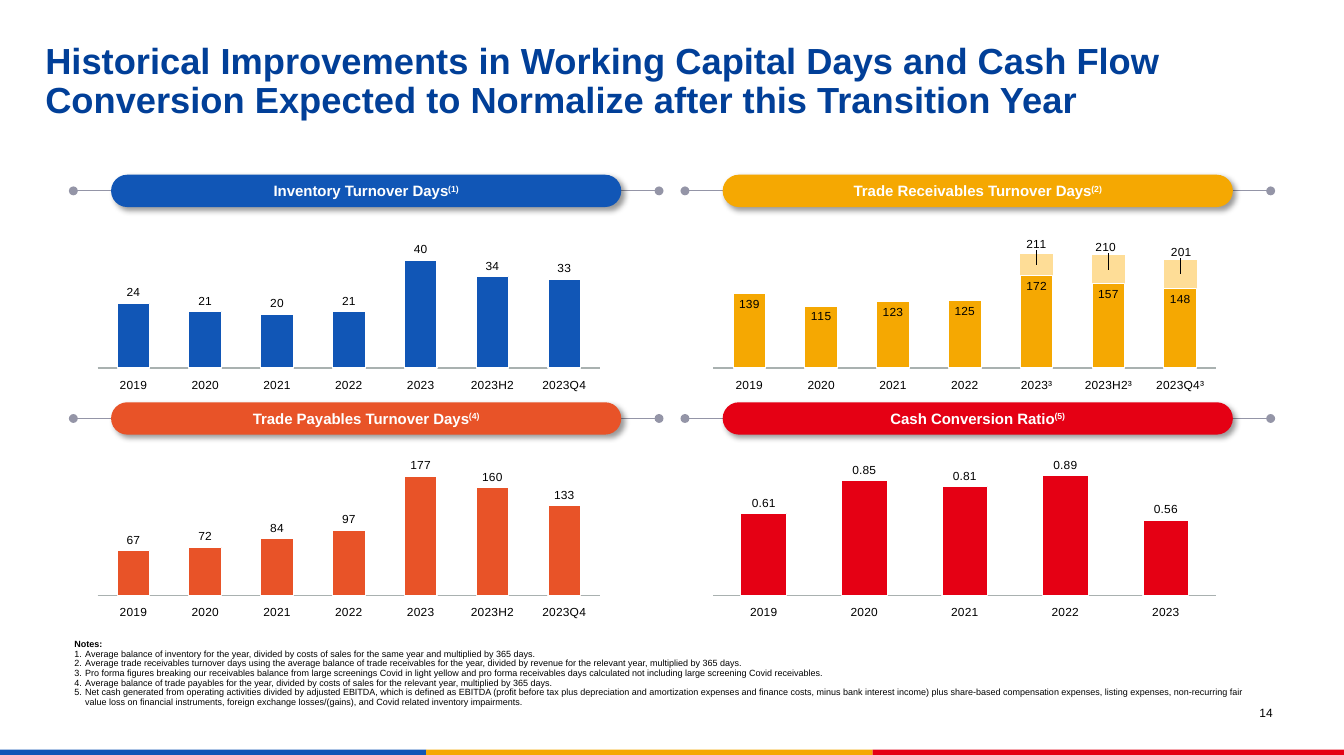
from lxml import etree
from pptx import Presentation
from pptx.chart.data import CategoryChartData
from pptx.dml.color import RGBColor
from pptx.enum.chart import XL_CHART_TYPE, XL_LABEL_POSITION, XL_TICK_LABEL_POSITION, XL_TICK_MARK
from pptx.enum.shapes import MSO_CONNECTOR, MSO_SHAPE
from pptx.enum.text import MSO_ANCHOR, PP_ALIGN
from pptx.oxml.ns import qn
from pptx.util import Inches, Pt

CLUSTERED, STACKED = XL_CHART_TYPE.COLUMN_CLUSTERED, XL_CHART_TYPE.COLUMN_STACKED
OUTSIDE, INSIDE = XL_LABEL_POSITION.OUTSIDE_END, XL_LABEL_POSITION.INSIDE_END
LOW, NO_TICK = XL_TICK_LABEL_POSITION.LOW, XL_TICK_MARK.NONE
RECT, PILL = MSO_SHAPE.RECTANGLE, MSO_SHAPE.ROUNDED_RECTANGLE
STRAIGHT = MSO_CONNECTOR.STRAIGHT
TOP, MIDDLE, BOTTOM = MSO_ANCHOR.TOP, MSO_ANCHOR.MIDDLE, MSO_ANCHOR.BOTTOM
LEFT, CENTER, RIGHT = PP_ALIGN.LEFT, PP_ALIGN.CENTER, PP_ALIGN.RIGHT

NAVY = RGBColor(0x01, 0x3F, 0x98)
BLUE = RGBColor(0x11, 0x56, 0xB6)
YELLOW = RGBColor(0xF5, 0xA8, 0x02)
PALE_YELLOW = RGBColor(0xFE, 0xDD, 0x97)
ORANGE = RGBColor(0xE8, 0x53, 0x28)
RED = RGBColor(0xE5, 0x00, 0x14)
GREY = RGBColor(0x94, 0x95, 0xA7)
AXIS_GREY = RGBColor(0xA9, 0xB1, 0xB0)
BLACK = RGBColor(0, 0, 0)
WHITE = RGBColor(0xFF, 0xFF, 0xFF)

FONT = "Arial"
WIDTH, HEIGHT = 12.46, 7
HEADING_LEFTS, CHART_LEFTS = (0.68, 6.35), (0.68, 6.39)
ROW_CENTERS = (1.77, 3.88)
RULE_WIDTH, PILL_WIDTH, PILL_HEIGHT = 5.43, 4.73, 0.3
CHART_WIDTH, CHART_HEIGHT, CHART_DROP = 4.89, 1.5, 0.36
PLOT_AREA = {"x": 0.046, "y": 0.022, "w": 0.954, "h": 0.859}

TITLE = ("Historical Improvements in Working Capital Days and Cash Flow "
         "Conversion Expected to Normalize after this Transition Year")
YEARS = ["2019", "2020", "2021", "2022", "2023"]
PERIODS = YEARS + ["2023H2", "2023Q4"]
FOOTNOTED = YEARS[:4] + [name + "³" for name in PERIODS[4:]]
# Text of each stacked total, with its shift as a share of the chart's size
TOTALS = {4: ("211", 0, -0.13), 5: ("210", -0.005, -0.14), 6: ("201", 0.002, -0.14)}

PANELS = [
    dict(row=0, col=0, heading="Inventory Turnover Days", note="(1)", color=BLUE,
         names=PERIODS, values=[24, 21, 20, 21, 40, 34, 33], top=50),
    dict(row=0, col=1, heading="Trade Receivables Turnover Days", note="(2)", color=YELLOW,
         names=FOOTNOTED, values=[139, 115, 123, 125, 172, 157, 148], top=250,
         extra=[None] * 4 + [39, 53, 53]),
    dict(row=1, col=0, heading="Trade Payables Turnover Days", note="(4)", color=ORANGE,
         names=PERIODS, values=[67, 72, 84, 97, 177, 160, 133], top=200),
    dict(row=1, col=1, heading="Cash Conversion Ratio", note="(5)", color=RED,
         names=YEARS, values=[0.61, 0.85, 0.81, 0.89, 0.56], top=1, number_format="0.00"),
]
NOTES = [
    "Average balance of inventory for the year, divided by costs of sales for the same year "
    "and multiplied by 365 days.",
    "Average trade receivables turnover days using the average balance of trade receivables "
    "for the year, divided by revenue for the relevant year, multiplied by 365 days.",
    "Pro forma figures breaking our receivables balance from large screenings Covid in light "
    "yellow and pro forma receivables days calculated not including large screening Covid "
    "receivables.",
    "Average balance of trade payables for the year, divided by costs of sales for the "
    "relevant year, multiplied by 365 days.",
    "Net cash generated from operating activities divided by adjusted EBITDA, which is defined "
    "as EBITDA (profit before tax plus depreciation and amortization expenses and finance "
    "costs, minus bank interest income) plus share-based compensation expenses, listing "
    "expenses, non-recurring fair value loss on financial instruments, foreign exchange "
    "losses/(gains), and Covid related inventory impairments.",
]


def set_all(target, values):
    for name, value in values.items():
        setattr(target, name, value)


def add_child(parent, tag, **attributes):
    return etree.SubElement(parent, qn(tag), {key: str(value) for key, value in attributes.items()})


def add_span(para, text, size, color, bold=False):
    span = para.add_run()
    span.text = text
    set_all(span.font, dict(name=FONT, size=Pt(size), bold=bold))
    span.font.color.rgb = color
    return span


def set_frame(frame, anchor, margins):
    """Wrap the text and set its margins in the order left, top, right, bottom."""
    sides = ("margin_left", "margin_top", "margin_right", "margin_bottom")
    set_all(frame, dict(zip(sides, map(Inches, margins)), word_wrap=True, vertical_anchor=anchor))


def add_text_box(page, area, anchor=TOP, margins=(0, 0, 0, 0)):
    box = page.shapes.add_textbox(*map(Inches, area))
    set_frame(box.text_frame, anchor, margins)
    return box.text_frame


def add_block(page, preset, area, color):
    block = page.shapes.add_shape(preset, *map(Inches, area))
    block.shadow.inherit = False
    block.fill.solid()
    block.fill.fore_color.rgb = color
    block.line.fill.background()
    return block


def add_rule(page, left, center):
    rule = page.shapes.add_connector(
        STRAIGHT, *map(Inches, (left, center, left + RULE_WIDTH, center)))
    rule.line.color.rgb = GREY
    rule.line.width = Pt(0.75)
    properties = rule.line._get_or_add_ln()
    for end in ("a:headEnd", "a:tailEnd"):
        add_child(properties, end, type="oval")
    add_child(properties.getparent(), "a:effectLst")


def add_heading(page, left, center, text, note, color):
    add_rule(page, left, center)
    area = (left + (RULE_WIDTH - PILL_WIDTH) / 2, center - PILL_HEIGHT / 2, PILL_WIDTH, PILL_HEIGHT)
    pill = add_block(page, PILL, area, color)
    pill.adjustments[0] = 0.5
    effects = pill.element.spPr.find(qn("a:effectLst"))
    shadow = add_child(effects, "a:outerShdw", blurRad=Pt(4), dist=Pt(3), dir=45 * 60000,
                       algn="tl", rotWithShape=0)
    add_child(add_child(shadow, "a:srgbClr", val=BLACK), "a:alpha", val=40000)
    set_frame(pill.text_frame, MIDDLE, (0, 0, 0, 0))
    para = pill.text_frame.paragraphs[0]
    set_all(para, dict(alignment=CENTER, space_before=Pt(4)))
    add_span(para, text, 10, WHITE, True)
    raised = add_span(para, note, 10, WHITE, True)
    raised._r.get_or_add_rPr().set("baseline", "30000")


def add_layout(parent, index, values, **modes):
    """Give a chart part a manual layout, as shares of the chart's size."""
    layout = etree.Element(qn("c:layout"))
    manual = add_child(layout, "c:manualLayout")
    for tag, value in {**modes, **values}.items():
        add_child(manual, "c:" + tag, val=value)
    parent.insert(index, layout)


def add_totals(series):
    for index, (text, shift_x, shift_y) in TOTALS.items():
        label = series.points[index].data_label
        add_span(label.text_frame.paragraphs[0], text, 8, BLACK)
        element = series._element.xpath(f".//c:dLbl[c:idx/@val='{index}']")[0]
        add_layout(element, 1, {"x": shift_x, "y": shift_y})


def add_column_chart(page, area, color, names, values, top, extra=None, number_format="#,##0"):
    data = CategoryChartData()
    data.categories = names
    data.add_series("Series 1", values)
    if extra:
        data.add_series("Series 2", extra)
    chart = page.shapes.add_chart(STACKED if extra else CLUSTERED, *map(Inches, area), data).chart
    set_all(chart, dict(has_legend=False, has_title=False))
    set_all(chart.font, dict(name=FONT, size=Pt(8)))
    chart.font.color.rgb = BLACK

    set_all(chart.value_axis, dict(minimum_scale=0, maximum_scale=top,
                                   has_major_gridlines=False, visible=False))
    axis = chart.category_axis
    set_all(axis, dict(tick_label_position=LOW, major_tick_mark=NO_TICK, minor_tick_mark=NO_TICK))
    axis.format.line.color.rgb = AXIS_GREY
    axis.format.line.width = Pt(0.75)

    plot = chart.plots[0]
    set_all(plot, dict(gap_width=120, overlap=100 if extra else -10, vary_by_categories=False))
    for series, fill in zip(plot.series, (color, PALE_YELLOW)):
        series.format.fill.solid()
        series.format.fill.fore_color.rgb = fill
    main_series = plot.series[0]
    main_series.format.line.color.rgb = WHITE
    main_series.format.line.width = Pt(0.75)
    set_all(main_series.data_labels, dict(
        show_value=True, number_format=number_format, number_format_is_linked=False,
        position=INSIDE if extra else OUTSIDE))
    if extra:
        add_totals(plot.series[1])

    plot_area = plot._element.getparent()
    for old in plot_area.findall(qn("c:layout")):
        plot_area.remove(old)
    add_layout(plot_area, 0, PLOT_AREA, layoutTarget="inner", xMode="edge", yMode="edge")


def add_panel(page, row, col, heading, note, color, **content):
    center = ROW_CENTERS[row]
    area = (CHART_LEFTS[col], center + CHART_DROP, CHART_WIDTH, CHART_HEIGHT)
    add_column_chart(page, area, color, **content)
    add_heading(page, HEADING_LEFTS[col], center, heading, note, color)


def add_notes(page):
    frame = add_text_box(page, (0.69, 5.87, 11.09, 0.74), BOTTOM, (0, 0.05, 0.1, 0.05))
    for index, text in enumerate(["Notes:"] + NOTES):
        para = frame.add_paragraph() if index else frame.paragraphs[0]
        para.line_spacing = 0.9
        add_span(para, text, 6, BLACK, bold=index == 0)
        if index:
            properties = para._p.get_or_add_pPr()
            properties.set("marL", str(Inches(0.1)))
            properties.set("indent", str(-Inches(0.1)))
            add_child(properties, "a:buAutoNum", type="arabicPeriod")


def add_line(page, area, text, size, color, align, anchor=TOP, margins=(0, 0, 0, 0), **format):
    para = add_text_box(page, area, anchor, margins).paragraphs[0]
    set_all(para, dict(alignment=align, line_spacing=0.9))
    add_span(para, text, size, color, **format)


def main():
    deck = Presentation()
    set_all(deck, dict(slide_width=Inches(WIDTH), slide_height=Inches(HEIGHT)))
    page = deck.slides.add_slide(deck.slide_layouts[6])
    edges = (0, 3.95, 8.09, WIDTH)
    for left, right, color in zip(edges, edges[1:], (BLUE, YELLOW, RED)):
        add_block(page, RECT, (left, HEIGHT - 0.05, right - left, 0.05), color)
    add_line(page, (0.42, 0.56, 11.1, 0.35), TITLE, 24.2, NAVY, LEFT, MIDDLE,
             (0, 0.05, 0.05, 0), bold=True)
    for panel in PANELS:
        add_panel(page, **panel)
    add_line(page, (11.52, 6.56, 0.28, 0.12), "14", 8, BLACK, RIGHT)
    add_notes(page)
    deck.save("out.pptx")


if __name__ == "__main__":
    main()
